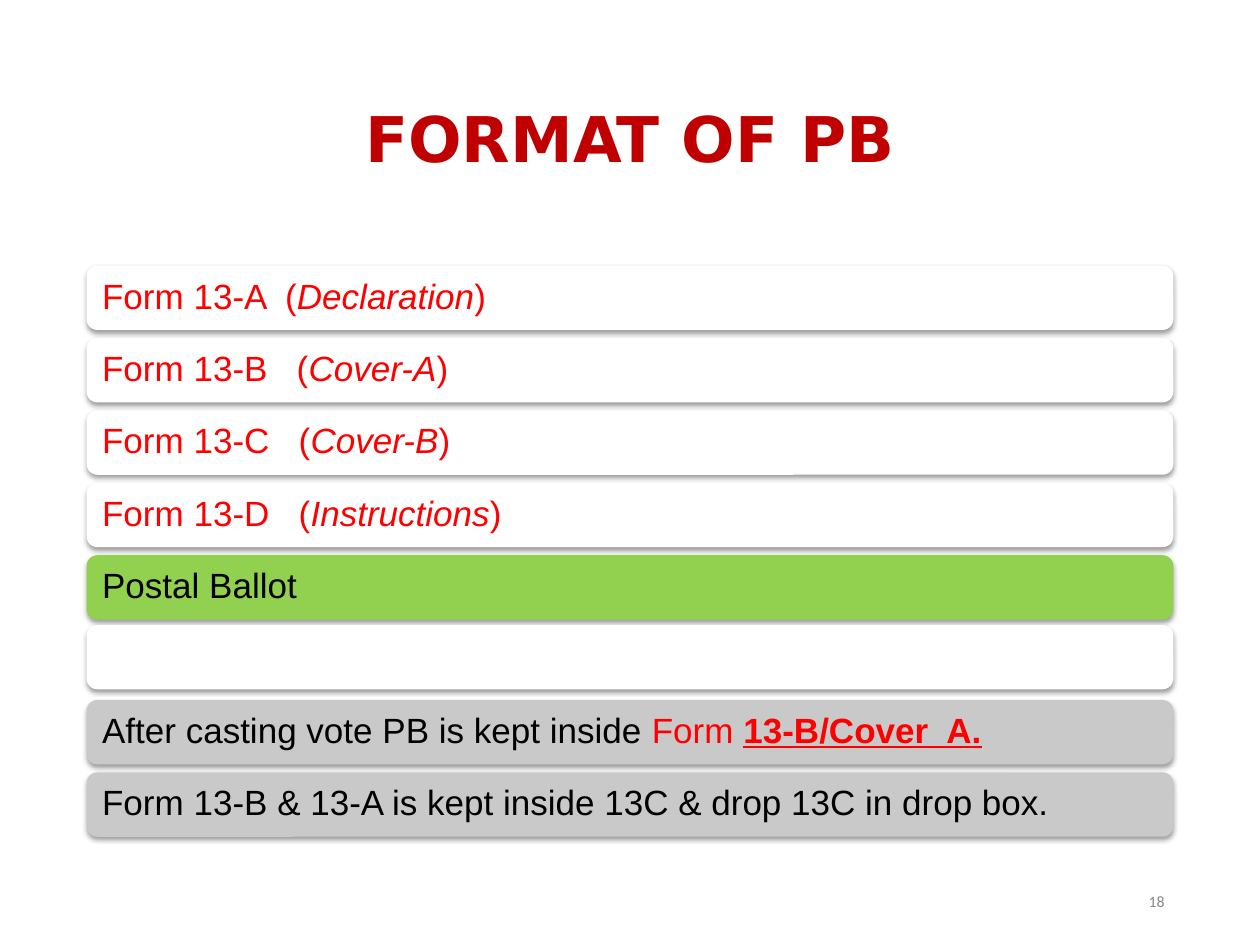
from dataclasses import dataclass

from lxml.etree import SubElement
from pptx import Presentation
from pptx.dml.color import RGBColor as Color
from pptx.enum.shapes import MSO_SHAPE as Shape
from pptx.enum.text import MSO_ANCHOR as Anchor, PP_ALIGN as Align
from pptx.oxml.ns import qn
from pptx.util import Pt


@dataclass(frozen=True)
class Theme:
    title: str = "C00000"
    alert: str = "FF0000"
    ink: str = "000000"
    muted: str = "888888"
    plain: str = "FFFFFF"
    ballot: str = "92D050"
    step: str = "C9C9C9"
    title_size: int = 36
    body_size: int = 20
    number_size: int = 9
    title_font: str = "DejaVu Sans"
    body_font: str = "Arial"
    number_font: str = "Calibri"


THEME = Theme()
FORMS = [
    ("Form 13-A  (", "Declaration"),
    ("Form 13-B   (", "Cover-A"),
    ("Form 13-C   (", "Cover-B"),
    ("Form 13-D   (", "Instructions"),
]
BARS = [
    (THEME.plain, 0, [(label, THEME.alert, ""), (name, THEME.alert, "i"), (")", THEME.alert, "")])
    for label, name in FORMS
] + [
    (THEME.ballot, 0, [("Postal Ballot", THEME.ink, "")]),
    (THEME.plain, -1.5, []),
    (THEME.step, 0, [
        ("After casting vote PB is kept inside ", THEME.ink, ""),
        ("Form ", THEME.alert, ""),
        ("13-B/Cover  A.", THEME.alert, "bu"),
    ]),
    (THEME.step, 0, [("Form 13-B & 13-A is kept inside 13C & drop 13C in drop box.", THEME.ink, "")]),
]
LEFT, WIDTH = 49.5, 621
BAR_TOP, BAR_HEIGHT, BAR_PITCH = 151.8, 36.8, 41.37


def style(span, font, size, color, marks=""):
    span.font.name, span.font.size = font, Pt(size)
    span.font.color.rgb = Color.from_string(color)
    span.font.bold, span.font.italic = "b" in marks, "i" in marks
    span.font.underline = "u" in marks


def set_frame(frame, side, edge):
    frame.word_wrap = True
    frame.vertical_anchor = Anchor.MIDDLE
    frame.margin_left = frame.margin_right = Pt(side)
    frame.margin_top = frame.margin_bottom = Pt(edge)


def add_shadow(shape):
    effects = SubElement(shape.element.spPr, qn("a:effectLst"))
    shadow = SubElement(effects, qn("a:outerShdw"), blurRad=str(Pt(3.1)), dist=str(Pt(1.6)),
                        dir="5400000", rotWithShape="0")
    color = SubElement(shadow, qn("a:srgbClr"), val=THEME.ink)
    SubElement(color, qn("a:alpha"), val="38000")


def add_bar(page, row, fill, shift, spans):
    top = BAR_TOP + row * BAR_PITCH + shift
    bar = page.shapes.add_shape(Shape.ROUNDED_RECTANGLE, Pt(LEFT), Pt(top), Pt(WIDTH), Pt(BAR_HEIGHT))
    bar.fill.solid()
    bar.fill.fore_color.rgb = Color.from_string(fill)
    bar.line.fill.background()
    add_shadow(bar)
    set_frame(bar.text_frame, 7.2, 5.5)
    para = bar.text_frame.paragraphs[0]
    para.alignment, para.line_spacing = Align.LEFT, 0.9
    for text, color, marks in spans:
        span = para.add_run()
        span.text = text
        style(span, THEME.body_font, THEME.body_size, color, marks)


def add_label(page, text, place, align, font, size, color, marks=""):
    box = page.shapes.add_textbox(*map(Pt, place))
    set_frame(box.text_frame, 5, 3)
    box.text_frame.text = text
    para = box.text_frame.paragraphs[0]
    para.alignment = align
    style(para.runs[0], font, size, color, marks)
    return para


def main():
    """Build the postal ballot format slide."""
    deck = Presentation()
    deck.slide_width, deck.slide_height = Pt(720), Pt(540)
    page = deck.slides.add_slide(deck.slide_layouts[6])
    title = add_label(page, "FORMAT OF PB", (LEFT, 28.8, WIDTH, 104.4), Align.CENTER,
                      THEME.title_font, THEME.title_size, THEME.title, "b")
    title.line_spacing = 0.9
    for row, (fill, shift, spans) in enumerate(BARS):
        add_bar(page, row, fill, shift, spans)
    add_label(page, "18", (508.5, 500.5, 162, 28.8), Align.RIGHT,
              THEME.number_font, THEME.number_size, THEME.muted)
    deck.save("out.pptx")


if __name__ == "__main__":
    main()
